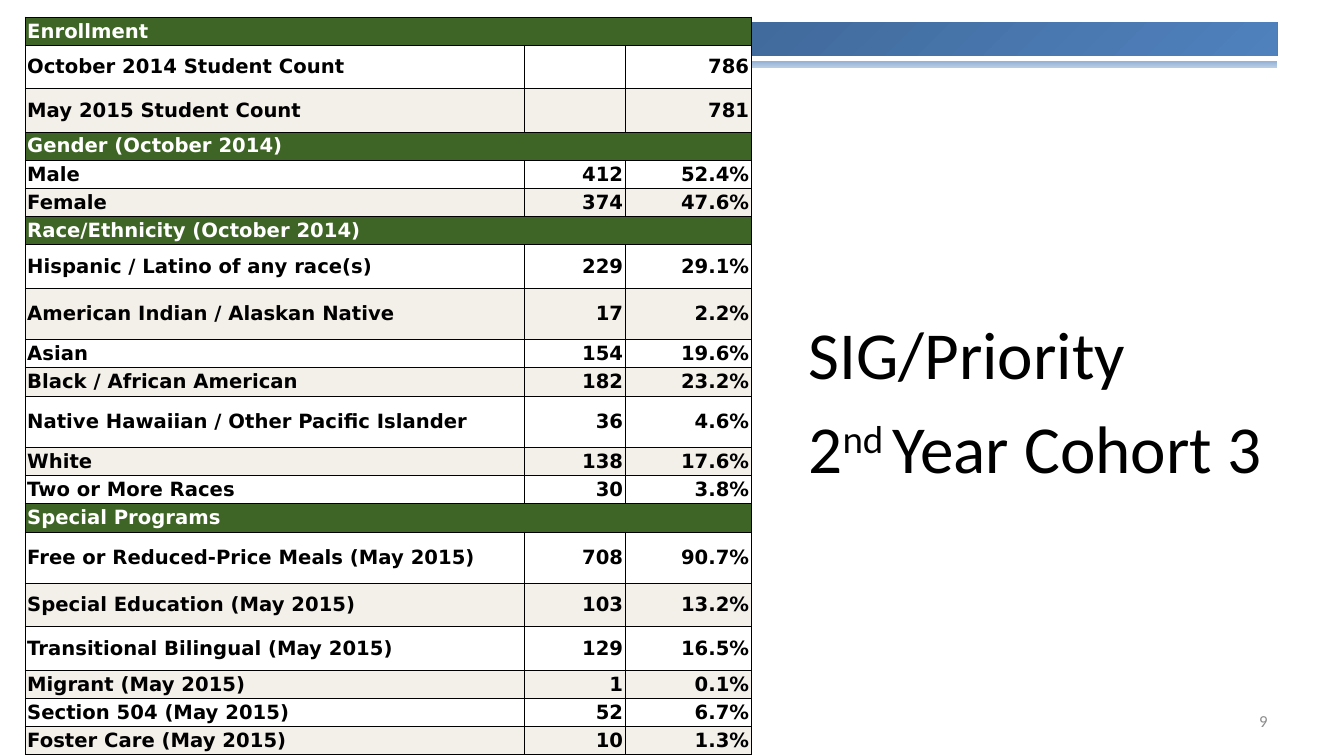
import pptx
import pptx.util
import pptx.dml.color
import pptx.enum.shapes
import pptx.enum.text
import lxml.etree

Inches = pptx.util.Inches
Pt = pptx.util.Pt
ALIGN = pptx.enum.text.PP_ALIGN
ANCHOR = pptx.enum.text.MSO_ANCHOR

COLORS = {
    "band_dark": "2F4D71", "band_light": "4F81BD",
    "stripe_dark": "95B3D7", "stripe_light": "B8CCE4",
    "section": "3F6526", "row": "FFFFFF", "row_alt": "F3EFE9",
    "ink": "000000", "section_ink": "FFFFFF", "page_ink": "8C8C8C",
}
SHORT, MEDIUM, TALL = 0.28, 0.43, 0.51
COLUMNS = [4.95, 1, 1.25]

# Section title -> (label, count, share or total, row height)
SECTIONS = {
    "Enrollment": [
        ("October 2014 Student Count", "", "786", MEDIUM),
        ("May 2015 Student Count", "", "781", MEDIUM),
    ],
    "Gender (October 2014)": [
        ("Male", "412", "52.4%", SHORT),
        ("Female", "374", "47.6%", SHORT),
    ],
    "Race/Ethnicity (October 2014)": [
        ("Hispanic / Latino of any race(s)", "229", "29.1%", MEDIUM),
        ("American Indian / Alaskan Native", "17", "2.2%", TALL),
        ("Asian", "154", "19.6%", SHORT),
        ("Black / African American", "182", "23.2%", SHORT),
        ("Native Hawaiian / Other Pacific Islander", "36", "4.6%", TALL),
        ("White", "138", "17.6%", SHORT),
        ("Two or More Races", "30", "3.8%", SHORT),
    ],
    "Special Programs": [
        ("Free or Reduced-Price Meals (May 2015)", "708", "90.7%", TALL),
        ("Special Education (May 2015)", "103", "13.2%", MEDIUM),
        ("Transitional Bilingual (May 2015)", "129", "16.5%", MEDIUM),
        ("Migrant (May 2015)", "1", "0.1%", SHORT),
        ("Section 504 (May 2015)", "52", "6.7%", SHORT),
        ("Foster Care (May 2015)", "10", "1.3%", SHORT),
    ],
}


def rgb(name):
    return pptx.dml.color.RGBColor.from_string(COLORS[name])


def add_text(paragraph, text, *, size, color="ink", font="Calibri", bold=False,
             align=ALIGN.LEFT, raised=False):
    paragraph.alignment = align
    run = paragraph.add_run()
    run.text = text
    run.font.size = Pt(size)
    run.font.name = font
    run.font.bold = bold
    run.font.color.rgb = rgb(color)
    if raised:
        run.font._element.set("baseline", "30000")


def add_frame(slide, left, top, width, height, anchor=ANCHOR.TOP):
    box = slide.shapes.add_textbox(Inches(left), Inches(top), Inches(width), Inches(height))
    box.text_frame.word_wrap = True
    box.text_frame.vertical_anchor = anchor
    return box.text_frame


def add_bar(slide, left, top, width, height, colors, angle):
    bar = slide.shapes.add_shape(pptx.enum.shapes.MSO_SHAPE.RECTANGLE, Inches(left),
                                 Inches(top), Inches(width), Inches(height))
    bar.shadow.inherit = False
    bar.line.fill.background()
    bar.fill.gradient()
    bar.fill.gradient_angle = angle
    for stop, position, color in zip(bar.fill.gradient_stops, (0, 1), colors):
        stop.position = position
        stop.color.rgb = rgb(color)


def add_header(slide, left, top, width):
    add_bar(slide, left, top, width, 0.33, ("band_dark", "band_light"), 315)
    add_bar(slide, left, top + 0.39, width, 0.06, ("stripe_dark", "stripe_light"), 270)


def style_cell(cell, fill):
    cell.margin_left = cell.margin_right = Inches(0.02)
    cell.margin_top = cell.margin_bottom = Inches(0.02)
    cell.vertical_anchor = ANCHOR.MIDDLE
    # Borders come before the fill in the cell properties
    properties = cell._tc.get_or_add_tcPr()
    for side in ("lnL", "lnR", "lnT", "lnB"):
        border = lxml.etree.SubElement(properties, pptx.oxml.ns.qn(f"a:{side}"), w=str(Pt(0.75)))
        solid = lxml.etree.SubElement(border, pptx.oxml.ns.qn("a:solidFill"))
        lxml.etree.SubElement(solid, pptx.oxml.ns.qn("a:srgbClr"), val=COLORS["ink"])
    cell.fill.solid()
    cell.fill.fore_color.rgb = rgb(fill)


def add_demographics(slide, left, top):
    # Flatten sections into rows; shading restarts in each section
    rows = []
    for title, entries in SECTIONS.items():
        rows.append(((title, "", ""), SHORT, "section"))
        for index, (*values, height) in enumerate(entries):
            rows.append((values, height, "row_alt" if index % 2 else "row"))

    table = slide.shapes.add_table(
        len(rows), len(COLUMNS), Inches(left), Inches(top), Inches(sum(COLUMNS)),
        Inches(sum(height for _, height, _ in rows))).table
    table.first_row = table.horz_banding = False
    for column, width in zip(table.columns, COLUMNS):
        column.width = Inches(width)

    for row_index, (values, height, fill) in enumerate(rows):
        row = table.rows[row_index]
        row.height = Inches(height)
        for column_index, (cell, value) in enumerate(zip(row.cells, values)):
            style_cell(cell, fill)
            if value:
                add_text(cell.text_frame.paragraphs[0], value, size=14,
                         font="DejaVu Sans", bold=True,
                         color="section_ink" if fill == "section" else "ink",
                         align=ALIGN.RIGHT if column_index else ALIGN.LEFT)
        if fill == "section":
            table.cell(row_index, 0).merge(table.cell(row_index, len(COLUMNS) - 1))


def add_cohort(slide, left, top, width, height):
    frame = add_frame(slide, left, top, width, height)
    program, year = frame.paragraphs[0], frame.add_paragraph()
    program.space_before = year.space_before = Pt(9.6)
    add_text(program, "SIG/Priority", size=48)
    add_text(year, "2", size=48)
    add_text(year, "nd ", size=48, raised=True)
    add_text(year, "Year Cohort 3", size=48)


def add_page_number(slide, left, top, width, height):
    frame = add_frame(slide, left, top, width, height, ANCHOR.MIDDLE)
    add_text(frame.paragraphs[0], "9", size=12, color="page_ink", align=ALIGN.RIGHT)


def main():
    deck = pptx.Presentation()
    deck.slide_width, deck.slide_height = Inches(13.33), Inches(7.5)
    slide = deck.slides.add_slide(deck.slide_layouts[6])
    add_header(slide, 0.67, 0.22, 12)
    add_cohort(slide, 7.92, 3.05, 4.98, 2.5)
    add_page_number(slide, 9.56, 6.95, 3.11, 0.4)
    add_demographics(slide, 0.25, 0.17)
    deck.save("out.pptx")


if __name__ == "__main__":
    main()
